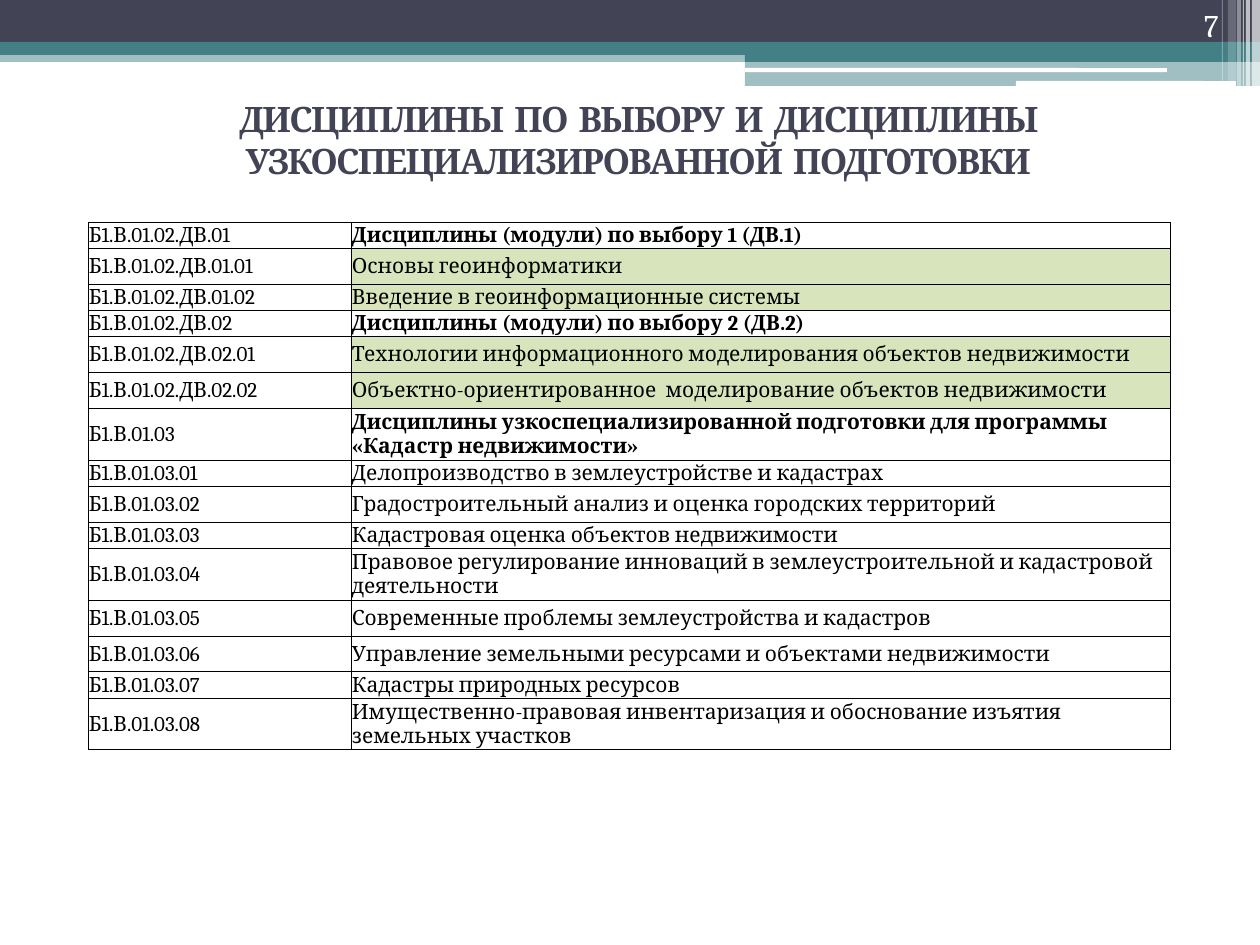
import pptx
import pptx.dml.color
import pptx.enum.shapes
import pptx.enum.text
import pptx.oxml.ns
import pptx.util
from lxml import etree

RGBColor = pptx.dml.color.RGBColor
PP_ALIGN = pptx.enum.text.PP_ALIGN
MSO_ANCHOR = pptx.enum.text.MSO_ANCHOR
MSO_SHAPE = pptx.enum.shapes.MSO_SHAPE
qn = pptx.oxml.ns.qn

NAVY = RGBColor(0x42, 0x44, 0x56)
TEAL = RGBColor(0x43, 0x80, 0x86)
WHITE = RGBColor(0xFF, 0xFF, 0xFF)
BLACK = RGBColor(0, 0, 0)
GREEN = RGBColor(0xD7, 0xE4, 0xBC)
FONT = "Cambria"
PX = 914400 // 126

# Content
TITLE = "ДИСЦИПЛИНЫ  ПО  ВЫБОРУ  И  ДИСЦИПЛИНЫ УЗКОСПЕЦИАЛИЗИРОВАННОЙ  ПОДГОТОВКИ"
PAGE = "7"

# Row kinds: heading, elective (green), plain
HEADING, ELECTIVE, PLAIN = "heading", "elective", "plain"
LOW, TALL = 25, 36
COURSES = [
    ("Б1.В.01.02.ДВ.01", "Дисциплины (модули) по выбору 1 (ДВ.1)", HEADING, LOW),
    ("Б1.В.01.02.ДВ.01.01", "Основы геоинформатики", ELECTIVE, TALL),
    ("Б1.В.01.02.ДВ.01.02", "Введение в геоинформационные системы", ELECTIVE, LOW),
    ("Б1.В.01.02.ДВ.02", "Дисциплины (модули) по выбору 2 (ДВ.2)", HEADING, LOW),
    ("Б1.В.01.02.ДВ.02.01",
     "Технологии информационного моделирования объектов недвижимости", ELECTIVE, TALL),
    ("Б1.В.01.02.ДВ.02.02",
     "Объектно-ориентированное  моделирование объектов недвижимости", ELECTIVE, TALL),
    ("Б1.В.01.03",
     "Дисциплины узкоспециализированной подготовки для программы «Кадастр недвижимости»",
     HEADING, TALL),
    ("Б1.В.01.03.01", "Делопроизводство в землеустройстве и кадастрах", PLAIN, LOW),
    ("Б1.В.01.03.02", "Градостроительный анализ и оценка городских территорий", PLAIN, TALL),
    ("Б1.В.01.03.03", "Кадастровая оценка объектов недвижимости", PLAIN, LOW),
    ("Б1.В.01.03.04",
     "Правовое регулирование инноваций в землеустроительной и кадастровой деятельности",
     PLAIN, TALL),
    ("Б1.В.01.03.05", "Современные проблемы землеустройства и кадастров", PLAIN, TALL),
    ("Б1.В.01.03.06", "Управление земельными ресурсами и объектами недвижимости", PLAIN, TALL),
    ("Б1.В.01.03.07", "Кадастры природных ресурсов", PLAIN, LOW),
    ("Б1.В.01.03.08",
     "Имущественно-правовая инвентаризация и обоснование изъятия земельных участков",
     PLAIN, TALL),
]
COLUMNS = (263, 819)
TABLE_LEFT, TABLE_TOP = 88, 222

# Header bands: left, top, width, height, colour, opacity in percent
BANDS = [
    (0, 50, 1260, 12, TEAL, 50),
    (0, 0, 1260, 43, NAVY, 100),
    (0, 42, 1260, 13, TEAL, 100),
    (745, 49, 515, 13, TEAL, 100),
    (745, 61, 515, 25, TEAL, 50),
]
HIGHLIGHTS = [(745, 68, 422, 4), (1016, 81, 220, 5)]
# Strips at the right edge: left, width, height, opacity
STRIPS = [(1252, 8, 86, 65), (1246, 4, 86, 65), (1243, 1, 86, 60),
          (1237, 4, 86, 40), (1228, 8, 81, 20), (1222, 1, 81, 30)]


def px(*values):
    return [v * PX for v in values]


def add_block(kind, box, color, opacity=100):
    sp = slide.shapes.add_shape(kind, *px(*box))
    sp.shadow.inherit = False
    sp.line.fill.background()
    sp.fill.solid()
    sp.fill.fore_color.rgb = color
    if opacity < 100:
        clr = sp.fill._xPr.find(qn("a:solidFill"))[0]
        etree.SubElement(clr, qn("a:alpha"), val=str(opacity * 1000))


def format_text(tf, size, color, bold=False, align=PP_ALIGN.LEFT):
    p = tf.paragraphs[0]
    p.alignment = align
    font = p.runs[0].font
    font.name, font.size, font.bold = FONT, pptx.util.Pt(size), bold
    font.color.rgb = color


def add_text(box, text, anchor, **style):
    tf = slide.shapes.add_textbox(*px(*box)).text_frame
    tf.word_wrap = True
    tf.vertical_anchor = anchor
    tf.text = text
    format_text(tf, **style)
    return tf.paragraphs[0].runs[0]


def set_borders(cell):
    tcPr = cell._tc.get_or_add_tcPr()
    for i, side in enumerate(("lnL", "lnR", "lnT", "lnB")):
        ln = etree.Element(qn("a:" + side), w=str(pptx.util.Pt(0.5)))
        fill = etree.SubElement(ln, qn("a:solidFill"))
        etree.SubElement(fill, qn("a:srgbClr"), val=str(BLACK))
        tcPr.insert(i, ln)


def fill_cell(cell, text, color, bold):
    cell.text = text
    cell.vertical_anchor = MSO_ANCHOR.MIDDLE
    cell.margin_left = cell.margin_right = cell.margin_top = PX
    cell.margin_bottom = 0
    cell.fill.solid()
    cell.fill.fore_color.rgb = color
    format_text(cell.text_frame, 12, BLACK, bold)
    set_borders(cell)


prs = pptx.Presentation()
prs.slide_width, prs.slide_height = pptx.util.Inches(10), pptx.util.Inches(7.5)
slide = prs.slides.add_slide(prs.slide_layouts[6])

# Header decoration
for *box, color, opacity in BANDS:
    add_block(MSO_SHAPE.RECTANGLE, box, color, opacity)
for box in HIGHLIGHTS:
    add_block(MSO_SHAPE.ROUNDED_RECTANGLE, box, WHITE)
for left, width, height, opacity in STRIPS:
    add_block(MSO_SHAPE.RECTANGLE, (left, 0, width, height), WHITE, opacity)

# Page number
add_text((1126, 0, 105, 50), PAGE, MSO_ANCHOR.BOTTOM,
         size=18, color=WHITE, align=PP_ALIGN.RIGHT)

# Course table
heights = [course[3] for course in COURSES]
table = slide.shapes.add_table(
    len(COURSES), len(COLUMNS),
    *px(TABLE_LEFT, TABLE_TOP, sum(COLUMNS), sum(heights))).table
table.first_row = table.horz_banding = False
for column, width in zip(table.columns, COLUMNS):
    column.width = width * PX
for row, (code, name, kind, height) in zip(table.rows, COURSES):
    row.height = height * PX
    fill_cell(row.cells[0], code, WHITE, False)
    fill_cell(row.cells[1], name, GREEN if kind == ELECTIVE else WHITE, kind == HEADING)

# Title
r = add_text((55, 82, 1166, 115), TITLE, MSO_ANCHOR.MIDDLE,
             size=20, color=NAVY, bold=True, align=PP_ALIGN.CENTER)
r.font._element.set("spc", "-100")

prs.save("out.pptx")
